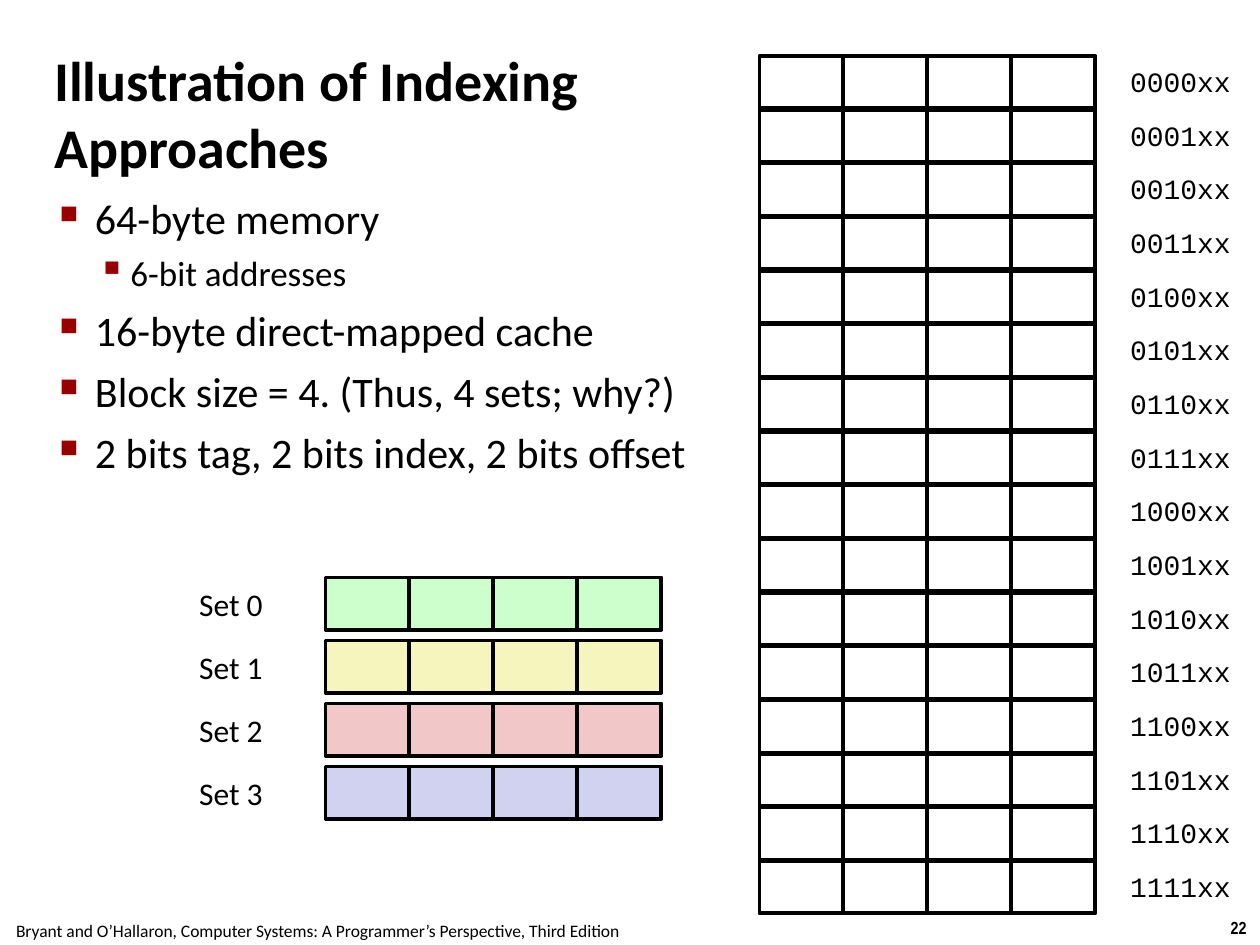
from pptx import Presentation
from pptx.dml.color import RGBColor
from pptx.enum.shapes import MSO_SHAPE as Shape
from pptx.enum.text import MSO_ANCHOR as Anchor, PP_ALIGN as Align
from pptx.oxml.xmlchemy import OxmlElement
from pptx.util import Pt

BLACK = RGBColor(0x00, 0x00, 0x00)
DARK_RED = RGBColor(0x99, 0x00, 0x00)
GREEN = RGBColor(0xCC, 0xFF, 0xCC)
YELLOW = RGBColor(0xF6, 0xF5, 0xBD)
PINK = RGBColor(0xF1, 0xC7, 0xC7)
LAVENDER = RGBColor(0xD1, 0xD1, 0xF0)

CELL_WIDTH, CELL_HEIGHT = 48, 30
CELLS_PER_BLOCK = 4

CACHE_LEFT, CACHE_TOP, CACHE_PITCH = 186, 330, 36
SET_COLORS = (GREEN, YELLOW, PINK, LAVENDER)

MEMORY_LEFT, MEMORY_TOP, MEMORY_PITCH = 434, 32, 30.67
MEMORY_BLOCKS = 16

# level, text
BULLETS = (
    (0, "64-byte memory"),
    (1, "6-bit addresses"),
    (0, "16-byte direct-mapped cache"),
    (0, "Block size = 4. (Thus, 4 sets; why?)"),
    (0, "2 bits tag, 2 bits index, 2 bits offset"),
)
# per level: size, space before, left margin, hanging indent, mark, mark percent
BULLET_STYLES = (
    (24, 6, 20.25, 20.25, "■", 60),
    (20, 5, 40.5, 18.75, "▪", 110),
)


def add_span(para, text, size=18, font="Calibri", bold=False):
    span = para.add_run()
    span.text = text
    span.font.size = Pt(size)
    span.font.name = font
    span.font.bold = bold
    span.font.color.rgb = BLACK


def add_box(page, left, top, width, height, anchor=Anchor.TOP, wrap=True,
            inset=None):
    box = page.shapes.add_textbox(Pt(left), Pt(top), Pt(width), Pt(height))
    frame = box.text_frame
    frame.word_wrap = wrap
    frame.vertical_anchor = anchor
    if inset is not None:
        frame.margin_left = frame.margin_right = Pt(inset)
        frame.margin_top = frame.margin_bottom = Pt(inset)
    return frame


def add_text(page, text, left, top, width, height, align=Align.CENTER,
             anchor=Anchor.MIDDLE, wrap=True, inset=None, **font_format):
    frame = add_box(page, left, top, width, height, anchor, wrap, inset)
    para = frame.paragraphs[0]
    para.alignment = align
    add_span(para, text, **font_format)


def set_bullet(para, margin, hanging, mark, percent):
    props = para._p.get_or_add_pPr()
    props.set("marL", str(Pt(margin)))
    props.set("indent", str(-Pt(hanging)))
    color = OxmlElement("a:buClr")
    rgb = OxmlElement("a:srgbClr")
    rgb.set("val", str(DARK_RED))
    color.append(rgb)
    size = OxmlElement("a:buSzPct")
    size.set("val", str(percent * 1000))
    char = OxmlElement("a:buChar")
    char.set("char", mark)
    for element in (color, size, char):
        props.append(element)


def add_bullets(page, left, top, width, height):
    frame = add_box(page, left, top, width, height, inset=3)
    for index, (level, text) in enumerate(BULLETS):
        para = frame.add_paragraph() if index else frame.paragraphs[0]
        size, before, margin, hanging, mark, percent = BULLET_STYLES[level]
        para.level = level
        para.space_before = Pt(before)
        set_bullet(para, margin, hanging, mark, percent)
        add_span(para, text, size=size)


def add_block(page, left, top, color=None):
    """Draw one block as a grouped row of byte cells."""
    group = page.shapes.add_group_shape()
    for column in range(CELLS_PER_BLOCK):
        cell = group.shapes.add_shape(
            Shape.RECTANGLE, Pt(left + column * CELL_WIDTH), Pt(top),
            Pt(CELL_WIDTH), Pt(CELL_HEIGHT))
        cell.shadow.inherit = False
        cell.line.color.rgb = BLACK
        cell.line.width = Pt(2.25)
        if color is None:
            cell.fill.background()
        else:
            cell.fill.solid()
            cell.fill.fore_color.rgb = color


def add_cache(page):
    for index, color in enumerate(SET_COLORS):
        top = CACHE_TOP + index * CACHE_PITCH
        add_block(page, CACHE_LEFT, top, color)
        add_text(page, f"Set {index}", 96, top, 72, CELL_HEIGHT)


def add_memory(page):
    for index in range(MEMORY_BLOCKS):
        top = MEMORY_TOP + index * MEMORY_PITCH
        add_block(page, MEMORY_LEFT, top)
        add_text(page, f"{index:04b}xx", 635.5, top - 0.6, 78, CELL_HEIGHT,
                 size=16, font="Courier New")


def main():
    deck = Presentation()
    deck.slide_width, deck.slide_height = Pt(720), Pt(540)
    page = deck.slides.add_slide(deck.slide_layouts[6])

    add_text(page, "22", 695.5, 520.5, 24.5, 19.5, anchor=Anchor.TOP,
             wrap=False, size=10, font="Arial Narrow", bold=True)
    add_text(page, "Bryant and O’Hallaron, Computer Systems: "
             "A Programmer’s Perspective, Third Edition",
             -1.5, 522, 366, 19.5, anchor=Anchor.TOP, wrap=False, size=10)
    add_text(page, "Illustration of Indexing Approaches", 28, 34.5, 392, 60,
             align=Align.LEFT, inset=3, size=32, bold=True)
    add_bullets(page, 31, 107, 461, 85)
    add_cache(page)
    add_memory(page)

    deck.save("out.pptx")


if __name__ == "__main__":
    main()
